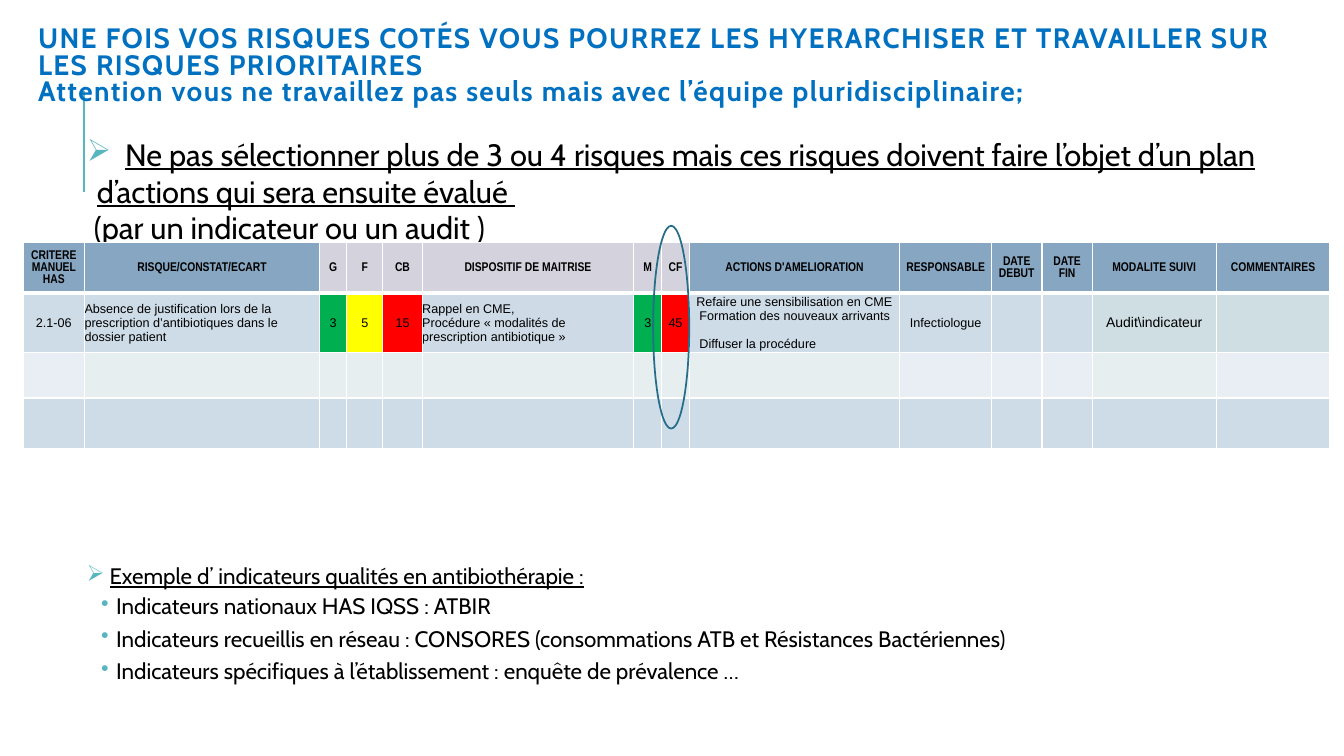
"""Build the risk prioritisation slide with its action plan table."""
from dataclasses import dataclass

import lxml.etree
import pptx
import pptx.dml.color
import pptx.enum.shapes
import pptx.enum.text
import pptx.oxml.ns
import pptx.util

Cm = pptx.util.Cm
Pt = pptx.util.Pt
qn = pptx.oxml.ns.qn
ALIGN = pptx.enum.text.PP_ALIGN
MIDDLE = pptx.enum.text.MSO_ANCHOR.MIDDLE

COLORS = {
    "title": "0070C0", "text": "000000", "accent": "58B6C0", "ring": "266D8A",
    "border": "FFFFFF", "head": "86A6C1", "rating": "D4D3DD", "band": "CEDCE7",
    "control": "CEDBE6", "follow": "CEDEE2", "pale": "E6EEF0", "pale_blue": "E8EEF3",
    "green": "00B050", "yellow": "FFFF00", "red": "FF0000",
}


@dataclass
class Run:
    text: str
    underline: bool = False


@dataclass
class Para:
    runs: list[Run]
    bullet: str = ""
    left: float = 0
    hang: float = 0
    line: float = 1
    before: float = 0
    after: float = 0


@dataclass
class Column:
    head: str
    width: float
    text: str = ""
    head_fill: str = "head"
    fill: str = "band"
    pale: str = "pale"
    centred: bool = True
    size: float = 9


COLUMNS = [
    Column("CRITERE MANUEL HAS", 1.55, "2.1-06", pale="pale_blue"),
    Column("RISQUE/CONSTAT/ECART", 5.92, "Absence de justification lors de la prescription "
           "d’antibiotiques dans le dossier patient", centred=False),
    Column("G", 0.69, "3", "rating", "green"),
    Column("F", 0.91, "5", "rating", "yellow"),
    Column("CB", 0.99, "15", "rating", "red"),
    Column("DISPOSITIF DE MAITRISE", 5.33, "Rappel en CME,\nProcédure « modalités de "
           "prescription antibiotique »", "rating", "control", centred=False),
    Column("M", 0.71, "3", "rating", "green"),
    Column("CF", 0.69, "45", "rating", "red"),
    Column("ACTIONS D'AMELIORATION", 5.31, "Refaire une sensibilisation en CME\n"
           "Formation des nouveaux arrivants\nDiffuser la procédure", centred=False),
    Column("RESPONSABLE", 2.31, "Infectiologue", pale="pale_blue"),
    Column("DATE DEBUT", 1.27, pale="pale_blue"),
    Column("DATE\vFIN", 1.27, pale="pale_blue"),
    Column("MODALITE SUIVI", 3.12, "Audit\\indicateur", fill="follow", size=10),
    Column("COMMENTAIRES", 2.87, fill="follow", pale="pale_blue"),
]
ROW_HEIGHTS = [1.27, 1.45, 1.14, 1.27]
ACTIONS_COLUMN = 8

ADVICE = [
    Para([Run("  "), Run("Ne pas sélectionner plus de 3 ou 4 risques mais ces risques doivent "
                         "faire l’objet d’un plan d’actions qui sera ensuite évalué ", True)],
         "➢", 0.25, -0.25),
    Para([Run(" "), Run("(", True), Run("par un indicateur ou un audit )")]),
]
INDICATORS = [
    Para([Run(" "), Run("Exemple d’ indicateurs qualités en antibiothérapie :", True)],
         "➢", 0.25, -0.25, 0.9, 0, 2),
] + [
    Para([Run(text)], "•", 0.74, -0.38, 0.9, 2, 4)
    for text in (
        "Indicateurs nationaux HAS IQSS : ATBIR",
        "Indicateurs recueillis en réseau : CONSORES (consommations ATB et Résistances Bactériennes)",
        "Indicateurs spécifiques à l’établissement : enquête de prévalence …",
    )
]


def rgb(name: str) -> pptx.dml.color.RGBColor:
    return pptx.dml.color.RGBColor.from_string(COLORS[name])


def style(r, font: str, size: float, color: str = "text", bold: bool = False) -> None:
    r.font.name, r.font.size, r.font.bold = font, Pt(size), bold
    r.font.color.rgb = rgb(color)


def indent(p, left: float, hang: float = 0) -> None:
    pPr = p._p.get_or_add_pPr()
    pPr.set("marL", str(Cm(left)))
    pPr.set("indent", str(Cm(hang)))


def add_box(slide, left: float, top: float, width: float, height: float):
    sp = slide.shapes.add_textbox(Cm(left), Cm(top), Cm(width), Cm(height))
    sp.text_frame.word_wrap = True
    return sp.text_frame


def add_title(slide) -> None:
    tf = add_box(slide, 0.71, 0.74, 32.16, 1.9)
    tf.vertical_anchor = MIDDLE
    tf.text = ("UNE FOIS VOS RISQUES COTÉS VOUS POURREZ LES HYERARCHISER ET TRAVAILLER SUR "
               "LES RISQUES PRIORITAIRES\vAttention vous ne travaillez pas seuls mais avec "
               "l’équipe pluridisciplinaire;")
    p = tf.paragraphs[0]
    p.line_spacing = 0.8
    for r in p.runs:
        style(r, "Cabin", 20, "title", True)
        r._r.get_or_add_rPr().set("spc", "100")


def add_paragraphs(slide, top: float, height: float, size: float, paras: list[Para]) -> None:
    tf = add_box(slide, 2.06, top, 30.78, height)
    tf.margin_left = tf.margin_top = tf.margin_right = tf.margin_bottom = Cm(0.13)
    for i, para in enumerate(paras):
        p = tf.add_paragraph() if i else tf.paragraphs[0]
        p.line_spacing = para.line
        p.space_before, p.space_after = Pt(para.before), Pt(para.after)
        indent(p, para.left, para.hang)
        if para.bullet:
            pPr = p._p.get_or_add_pPr()
            color = lxml.etree.SubElement(pPr, qn("a:buClr"))
            lxml.etree.SubElement(color, qn("a:srgbClr"), val=COLORS["accent"])
            lxml.etree.SubElement(pPr, qn("a:buChar"), char=para.bullet)
        for run in para.runs:
            r = p.add_run()
            r.text = run.text
            style(r, "Cabin", size)
            r.font.underline = run.underline


def fill_cell(cell, text: str, fill: str, font: str, size: float, bold: bool,
              centred: bool, bottom: float) -> None:
    cell.margin_left = cell.margin_right = cell.margin_top = cell.margin_bottom = 0
    cell.vertical_anchor = MIDDLE
    tcPr = cell._tc.get_or_add_tcPr()
    for side, width in (("L", 1), ("R", 1), ("T", 1), ("B", bottom)):
        ln = lxml.etree.SubElement(tcPr, qn(f"a:ln{side}"), w=str(Pt(width)))
        solid = lxml.etree.SubElement(ln, qn("a:solidFill"))
        lxml.etree.SubElement(solid, qn("a:srgbClr"), val=COLORS["border"])
    cell.fill.solid()
    cell.fill.fore_color.rgb = rgb(fill)
    cell.text_frame.text = text
    for p in cell.text_frame.paragraphs:
        p.alignment = ALIGN.CENTER if centred else ALIGN.LEFT
        for r in p.runs:
            style(r, font, size, bold=bold)


def add_plan_table(slide) -> None:
    width = sum(column.width for column in COLUMNS)
    table = slide.shapes.add_table(len(ROW_HEIGHTS), len(COLUMNS), Cm(0.58), Cm(6.12),
                                   Cm(width), Cm(sum(ROW_HEIGHTS))).table
    for row, height in zip(table.rows, ROW_HEIGHTS):
        row.height = Cm(height)
    for c, column in enumerate(COLUMNS):
        table.columns[c].width = Cm(column.width)
        fill_cell(table.cell(0, c), column.head, column.head_fill, "Arial Narrow", 9, True, True, 3)
        body = [(column.text, column.fill), ("", column.pale), ("", "band")]
        for row, (text, fill) in enumerate(body, 1):
            fill_cell(table.cell(row, c), text, fill, "Arial", column.size, False, column.centred, 1)
    actions = table.cell(1, ACTIONS_COLUMN).text_frame.paragraphs
    for p, left in zip(actions, (0.18, 0.26, 0.26)):
        indent(p, left)
    actions[-1].space_before = Pt(10)


def main() -> None:
    prs = pptx.Presentation()
    prs.slide_width, prs.slide_height = Cm(33.87), Cm(19.05)
    slide = prs.slides.add_slide(prs.slide_layouts[6])

    rule = slide.shapes.add_connector(pptx.enum.shapes.MSO_CONNECTOR.STRAIGHT,
                                      Cm(2.11), Cm(4.83), Cm(2.11), Cm(2.29))
    rule.line.color.rgb, rule.line.width = rgb("accent"), Pt(1.5)
    lxml.etree.SubElement(rule._element.spPr, qn("a:effectLst"))

    add_title(slide)
    add_paragraphs(slide, 3.28, 2.9, 22, ADVICE)
    add_paragraphs(slide, 14.12, 3.6, 16, INDICATORS)
    add_plan_table(slide)

    ring = slide.shapes.add_shape(pptx.enum.shapes.MSO_SHAPE.OVAL,
                                  Cm(16.46), Cm(5.69), Cm(0.91), Cm(5.11))
    ring.shadow.inherit = False
    ring.fill.background()
    ring.line.color.rgb, ring.line.width = rgb("ring"), Pt(1.25)
    prs.save("out.pptx")


if __name__ == "__main__":
    main()
